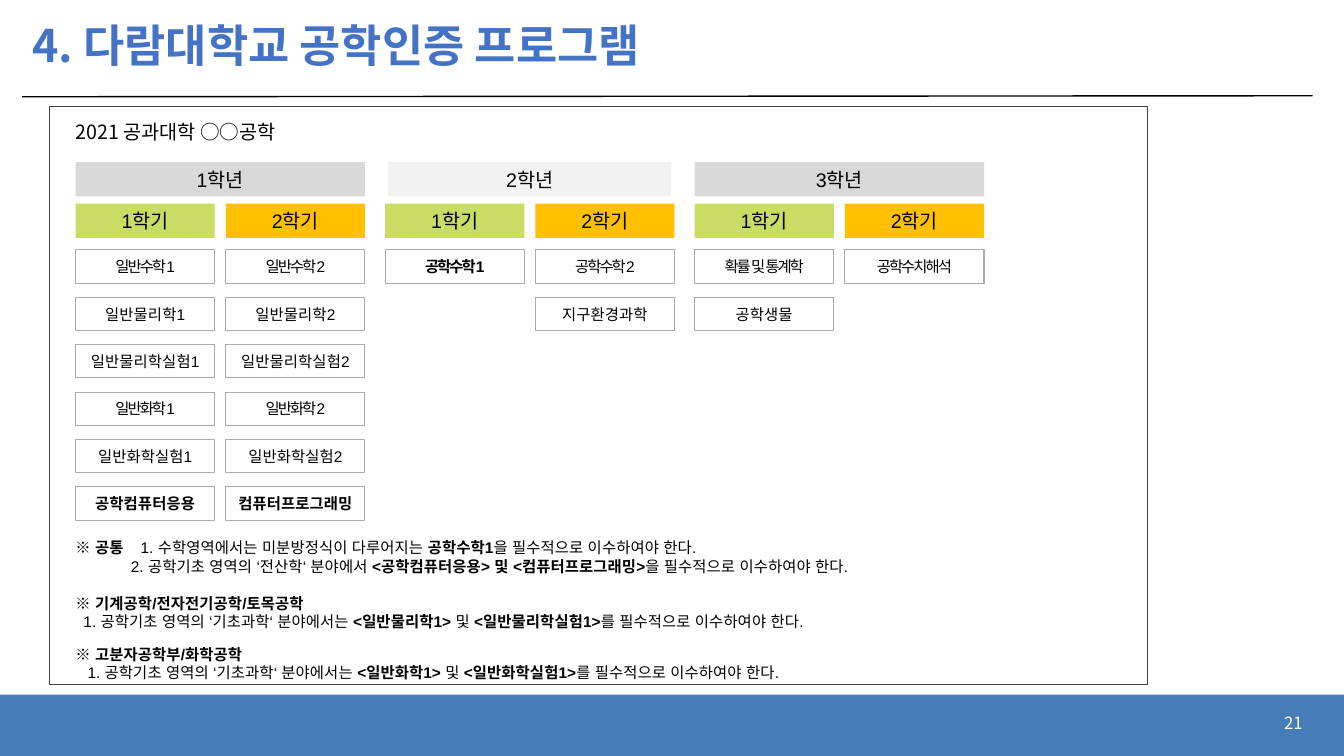
"""Build the engineering accreditation curriculum slide."""
import pptx
import pptx.dml.color
import pptx.enum.shapes
import pptx.enum.text
import pptx.oxml
import pptx.oxml.ns
import pptx.util

Inches = pptx.util.Inches
RGBColor = pptx.dml.color.RGBColor
Align = pptx.enum.text.PP_ALIGN
Anchor = pptx.enum.text.MSO_ANCHOR

BLACK = RGBColor(0x00, 0x00, 0x00)
WHITE = RGBColor(0xFF, 0xFF, 0xFF)
TITLE_BLUE = RGBColor(0x44, 0x72, 0xC4)
FOOTER_BLUE = RGBColor(0x46, 0x7D, 0xB9)
FRAME_GRAY = RGBColor(0x40, 0x40, 0x40)
BORDER_GRAY = RGBColor(0xAF, 0xAB, 0xAB)
YEAR_GRAY = RGBColor(0xD9, 0xD9, 0xD9)
YEAR_LIGHT = RGBColor(0xF2, 0xF2, 0xF2)
GREEN = RGBColor(0xCA, 0xDC, 0x63)
AMBER = RGBColor(0xFF, 0xC0, 0x00)
KOREAN_FONT = "Noto Sans CJK KR"
LATIN_FONT = "Arial"

TITLE = "4. 다람대학교 공학인증 프로그램"
DEPARTMENT = "2021 공과대학 ○○공학"
PAGE_NUMBER = "21"
YEARS = [("1학년", YEAR_GRAY, 0), ("2학년", YEAR_LIGHT, 0.03), ("3학년", YEAR_GRAY, 0)]
SEMESTERS = [("1학기", GREEN), ("2학기", AMBER)]
COURSES = [
    ["일반수학1", "일반물리학1", "일반물리학실험1", "일반화학1", "일반화학실험1", "공학컴퓨터응용"],
    ["일반수학2", "일반물리학2", "일반물리학실험2", "일반화학2", "일반화학실험2", "컴퓨터프로그래밍"],
    ["공학수학1"],
    ["공학수학2", "지구환경과학"],
    ["확률 및 통계학", "공학생물"],
    ["공학수치해석"],
]
REQUIRED = {"공학수학1", "공학컴퓨터응용", "컴퓨터프로그래밍"}
TIGHT_ROWS = {0, 3}
NOTES = [
    (5.29, [
        (0, [("※ 공통", True), (" ", False),
             ("1. 수학영역에서는 미분방정식이 다루어지는 ", False),
             ("공학수학1", True), ("을 필수적으로 이수하여야 한다.", False)]),
        (0.55, [("2. 공학기초 영역의 ‘전산학‘ 분야에서 ", False),
                ("<공학컴퓨터응용> 및 <컴퓨터프로그래밍>", True),
                ("을 필수적으로 이수하여야 한다.", False)]),
    ]),
    (5.84, [
        (0, [("※ 기계공학/전자전기공학/토목공학", True)]),
        (0.08, [("1. 공학기초 영역의 ‘기초과학‘ 분야에서는 ", False), ("<일반물리학1> ", True),
                ("및 ", False), ("<일반물리학실험1>", True),
                ("를 필수적으로 이수하여야 한다.", False)]),
    ]),
    (6.35, [
        (0, [("※ 고분자공학부/화학공학", True)]),
        (0.12, [("1. 공학기초 영역의 ‘기초과학‘ 분야에서는 ", False), ("<일반화학1> ", True),
                ("및 ", False), ("<일반화학실험1>", True),
                ("를 필수적으로 이수하여야 한다.", False)]),
    ]),
]

SLIDE_WIDTH, SLIDE_HEIGHT = 13.33, 7.5
FOOTER_TOP = 6.89
GRID_LEFT, YEAR_STEP, SEMESTER_STEP = 0.75, 3.07, 1.49
YEAR_TOP, SEMESTER_TOP, HEADER_HEIGHT = 1.61, 2.02, 0.34
COURSE_TOP, COURSE_STEP, COURSE_HEIGHT = 2.48, 0.47, 0.33
COLUMN_WIDTH = 1.38
LABEL_GAP = 9


def format_run(run, size, color=BLACK, bold=False, typeface=LATIN_FONT, spacing=0):
    font = run.font
    font.size, font.bold, font.name = pptx.util.Pt(size), bold, typeface
    font.color.rgb = color
    properties = run._r.get_or_add_rPr()
    properties.append(pptx.oxml.parse_xml(
        f'<a:ea {pptx.oxml.ns.nsdecls("a")} typeface="{typeface}"/>'))
    if spacing:
        properties.set("spc", str(round(spacing * 100)))


def add_box(slide, box, fill=None, line=None, line_width=0.75):
    shape = slide.shapes.add_shape(
        pptx.enum.shapes.MSO_SHAPE.RECTANGLE, *map(Inches, box))
    shape.shadow.inherit = False
    if fill is None:
        shape.fill.background()
    else:
        shape.fill.solid()
        shape.fill.fore_color.rgb = fill
    if line is None:
        shape.line.fill.background()
    else:
        shape.line.color.rgb = line
        shape.line.width = pptx.util.Pt(line_width)
    return shape


def label_box(shape, text, size, wrap=True, **style):
    frame = shape.text_frame
    frame.margin_left = frame.margin_right = Inches(0.01)
    frame.word_wrap = wrap
    frame.vertical_anchor = Anchor.MIDDLE
    frame.text = text
    paragraph = frame.paragraphs[0]
    paragraph.alignment = Align.CENTER
    format_run(paragraph.runs[0], size, **style)


def add_text(slide, box, text, size, wrap=True, anchor=Anchor.MIDDLE,
             alignment=Align.LEFT, line_spacing=1.0, **style):
    frame = slide.shapes.add_textbox(*map(Inches, box)).text_frame
    frame.word_wrap = wrap
    frame.vertical_anchor = anchor
    frame.text = text
    paragraph = frame.paragraphs[0]
    paragraph.alignment = alignment
    paragraph.line_spacing = line_spacing
    format_run(paragraph.runs[0], size, typeface=KOREAN_FONT, **style)


def add_note(slide, top, lines):
    frame = slide.shapes.add_textbox(
        *map(Inches, (0.65, top, 9.3, 0.47))).text_frame
    frame.word_wrap = True
    for index, (indent, pieces) in enumerate(lines):
        paragraph = frame.add_paragraph() if index else frame.paragraphs[0]
        paragraph.alignment = Align.JUSTIFY
        properties = paragraph._p.get_or_add_pPr()
        properties.set("marL", str(Inches(indent)))
        properties.set("indent", "0")
        for text, bold in pieces:
            run = paragraph.add_run()
            run.text = text
            format_run(run, 11, bold=bold, spacing=LABEL_GAP if text == " " else 0)


def add_curriculum(slide):
    for year, (name, fill, inset) in enumerate(YEARS):
        left = GRID_LEFT + year * YEAR_STEP
        width = SEMESTER_STEP + COLUMN_WIDTH - 2 * inset
        header = add_box(slide, (left + inset, YEAR_TOP, width, HEADER_HEIGHT), fill)
        label_box(header, name, 14)
        for term, (semester, color) in enumerate(SEMESTERS):
            column = left + term * SEMESTER_STEP
            header = add_box(
                slide, (column, SEMESTER_TOP, COLUMN_WIDTH, HEADER_HEIGHT), color)
            label_box(header, semester, 14)
            for row, course in enumerate(COURSES[year * len(SEMESTERS) + term]):
                top = COURSE_TOP + row * COURSE_STEP
                cell = add_box(slide, (column, top, COLUMN_WIDTH, COURSE_HEIGHT),
                               line=BORDER_GRAY)
                label_box(cell, course, 11, wrap=False, bold=course in REQUIRED,
                          spacing=-1.5 if row in TIGHT_ROWS else 0)


def main():
    presentation = pptx.Presentation()
    presentation.slide_width = Inches(SLIDE_WIDTH)
    presentation.slide_height = Inches(SLIDE_HEIGHT)
    slide = presentation.slides.add_slide(presentation.slide_layouts[6])
    add_box(slide, (0, FOOTER_TOP, SLIDE_WIDTH, SLIDE_HEIGHT - FOOTER_TOP), FOOTER_BLUE)
    rule = slide.shapes.add_connector(
        pptx.enum.shapes.MSO_CONNECTOR.STRAIGHT, *map(Inches, (0.22, 0.96, 13.02, 0.95)))
    rule.line.color.rgb = BLACK
    rule.line.width = pptx.util.Pt(1)
    rule._element.spPr.append(pptx.oxml.parse_xml(
        f'<a:effectLst {pptx.oxml.ns.nsdecls("a")}/>'))
    add_text(slide, (0.22, 0.1, 12.81, 0.75), TITLE, 32, color=TITLE_BLUE,
             bold=True, line_spacing=0.9)
    add_text(slide, (10.02, 6.97, 3, 0.4), PAGE_NUMBER, 12, color=WHITE,
             alignment=Align.RIGHT)
    add_box(slide, (0.49, 1.06, 10.89, 5.73), line=FRAME_GRAY, line_width=0.5)
    add_text(slide, (0.65, 1.14, 2.36, 0.34), DEPARTMENT, 14, wrap=False,
             anchor=Anchor.TOP)
    add_curriculum(slide)
    for top, lines in NOTES:
        add_note(slide, top, lines)
    presentation.save("out.pptx")


if __name__ == "__main__":
    main()
